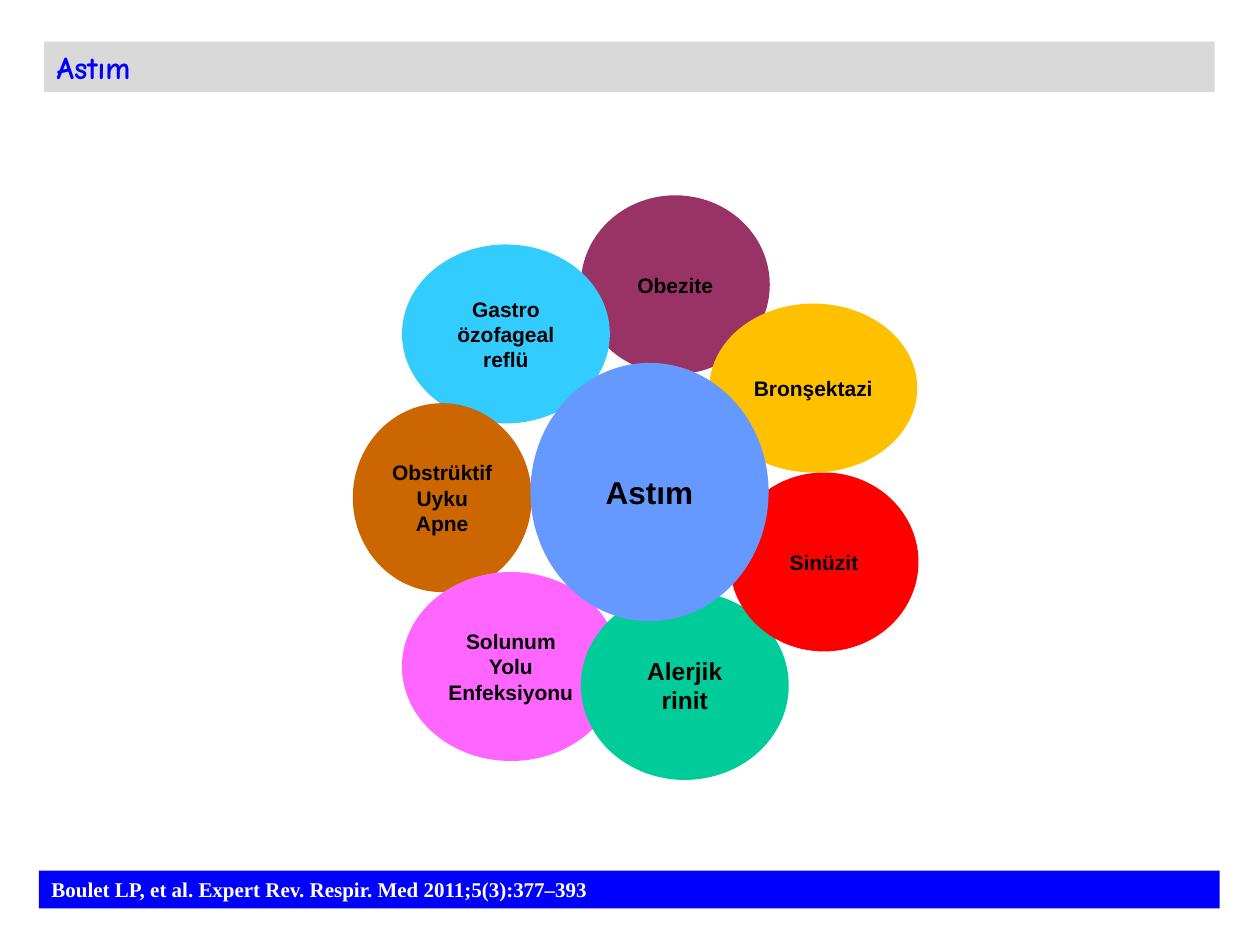
from dataclasses import dataclass

from pptx import Presentation
from pptx.dml.color import RGBColor as Rgb
from pptx.enum.shapes import MSO_SHAPE as Shape
from pptx.enum.text import MSO_ANCHOR as Anchor, PP_ALIGN as Align
from pptx.util import Inches, Pt


@dataclass(frozen=True)
class Theme:
    title_bar: str = "D9D9D9"
    blue: str = "0000FF"
    white: str = "FFFFFF"
    black: str = "000000"
    title_font: str = "Comic Neue"
    body_font: str = "Arial"
    source_font: str = "Times New Roman"
    large: int = 18
    medium: int = 14
    small: int = 12


THEME = Theme()


@dataclass(frozen=True)
class Box:
    left: float
    top: float
    width: float
    height: float

    def lengths(self) -> tuple:
        return tuple(map(Inches, (self.left, self.top, self.width, self.height)))


@dataclass(frozen=True)
class Petal:
    lines: tuple
    box: Box
    fill: str
    size: int = THEME.small


TITLE_BOX = Box(0.35, 0.33, 9.29, 0.4)
SOURCE_BOX = Box(0.31, 6.91, 9.37, 0.3)

# Back to front: the centre circle overlaps all its neighbours.
PETALS = (
    Petal(("Obezite",), Box(4.61, 1.55, 1.5, 1.42), "993366"),
    Petal(("Bronşektazi",), Box(5.63, 2.41, 1.65, 1.34), "FFC000"),
    Petal(("Gastro", "özofageal", "reflü"), Box(3.19, 1.94, 1.65, 1.42), "33CCFF"),
    Petal(("Obstrüktif Uyku Apne",), Box(2.8, 3.2, 1.42, 1.5), "CC6600"),
    Petal(("Solunum Yolu Enfeksiyonu",), Box(3.19, 4.54, 1.73, 1.5), "FF66FF"),
    Petal(("Alerjik rinit",), Box(4.61, 4.69, 1.65, 1.5), "00CC99", THEME.medium),
    Petal(("Sinüzit",), Box(5.79, 3.75, 1.5, 1.42), "FF0000"),
    Petal(("Astım",), Box(4.21, 2.88, 1.89, 2.05), "6699FF", THEME.large),
)


def paint(shape, color: str) -> None:
    shape.fill.solid()
    shape.fill.fore_color.rgb = Rgb.from_string(color)
    shape.line.fill.background()


def write(shape, lines: tuple, align: Align, font: str, size: int, color: str) -> None:
    """Fill the shape with one bold paragraph per line."""
    frame = shape.text_frame
    frame.word_wrap = True
    frame.vertical_anchor = Anchor.MIDDLE
    font_format = {"name": font, "size": Pt(size), "bold": True}
    for index, line in enumerate(lines):
        para = frame.add_paragraph() if index else frame.paragraphs[0]
        para.alignment = align
        span = para.add_run()
        span.text = line
        for name, value in font_format.items():
            setattr(span.font, name, value)
        span.font.color.rgb = Rgb.from_string(color)


def add_filled_shape(page, kind: Shape, box: Box, color: str):
    shape = page.shapes.add_shape(kind, *box.lengths())
    shape.shadow.inherit = False
    paint(shape, color)
    return shape


def add_title(page, text: str) -> None:
    title = page.shapes.title
    places = zip(("left", "top", "width", "height"), TITLE_BOX.lengths())
    for name, value in places:
        setattr(title, name, value)
    paint(title, THEME.title_bar)
    write(title, (text,), Align.JUSTIFY, THEME.title_font, THEME.large, THEME.blue)


def add_source(page, text: str) -> None:
    bar = add_filled_shape(page, Shape.RECTANGLE, SOURCE_BOX, THEME.blue)
    write(bar, (text,), Align.LEFT, THEME.source_font, THEME.small, THEME.white)


def add_petal(page, petal: Petal) -> None:
    oval = add_filled_shape(page, Shape.OVAL, petal.box, petal.fill)
    write(oval, petal.lines, Align.CENTER, THEME.body_font, petal.size, THEME.black)


def main() -> None:
    deck = Presentation()
    deck.slide_width, deck.slide_height = Inches(10), Inches(7.5)
    page = deck.slides.add_slide(deck.slide_layouts.get_by_name("Title Only"))
    add_title(page, "Astım")
    add_source(page, "Boulet LP, et al. Expert Rev. Respir. Med 2011;5(3):377–393")
    for petal in PETALS:
        add_petal(page, petal)
    deck.save("out.pptx")


if __name__ == "__main__":
    main()
